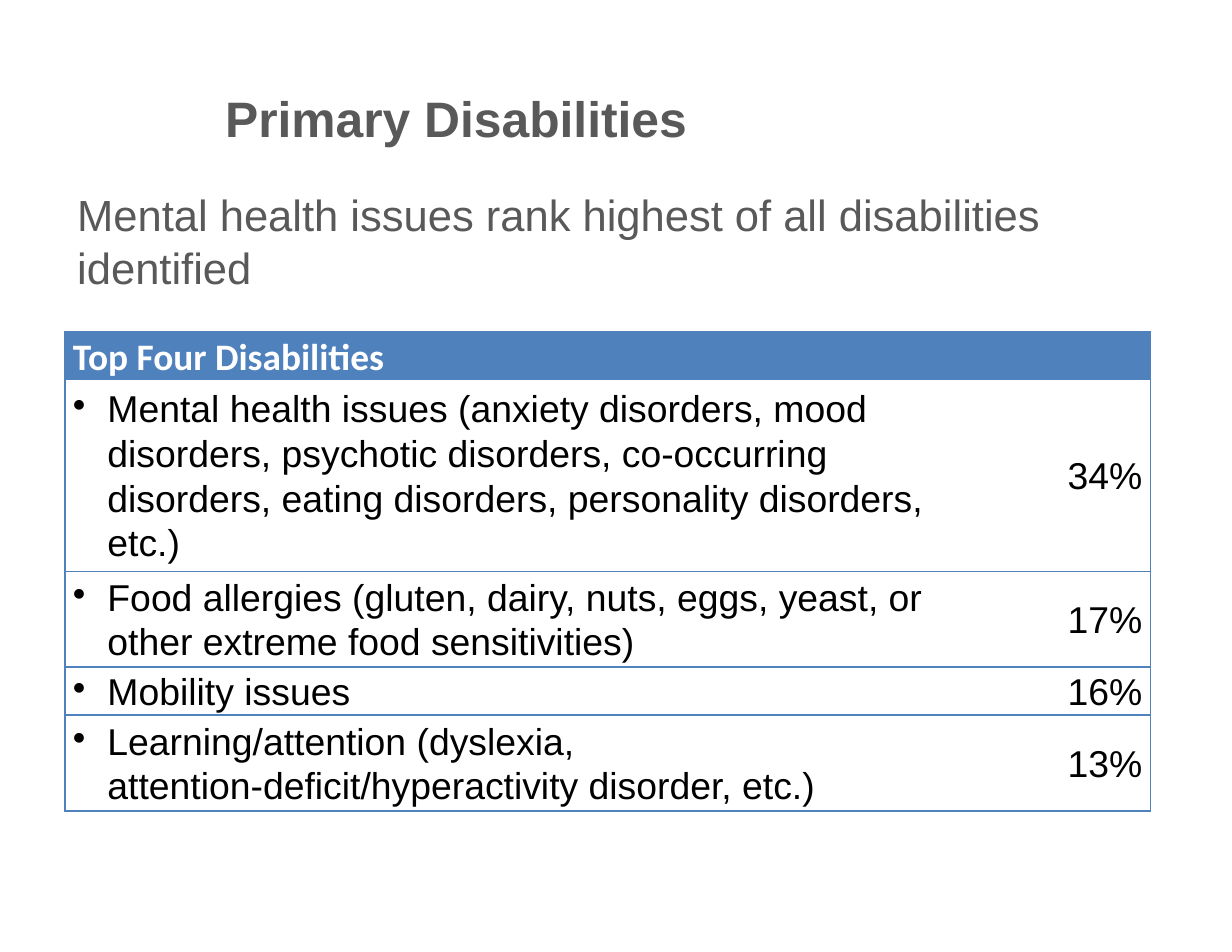
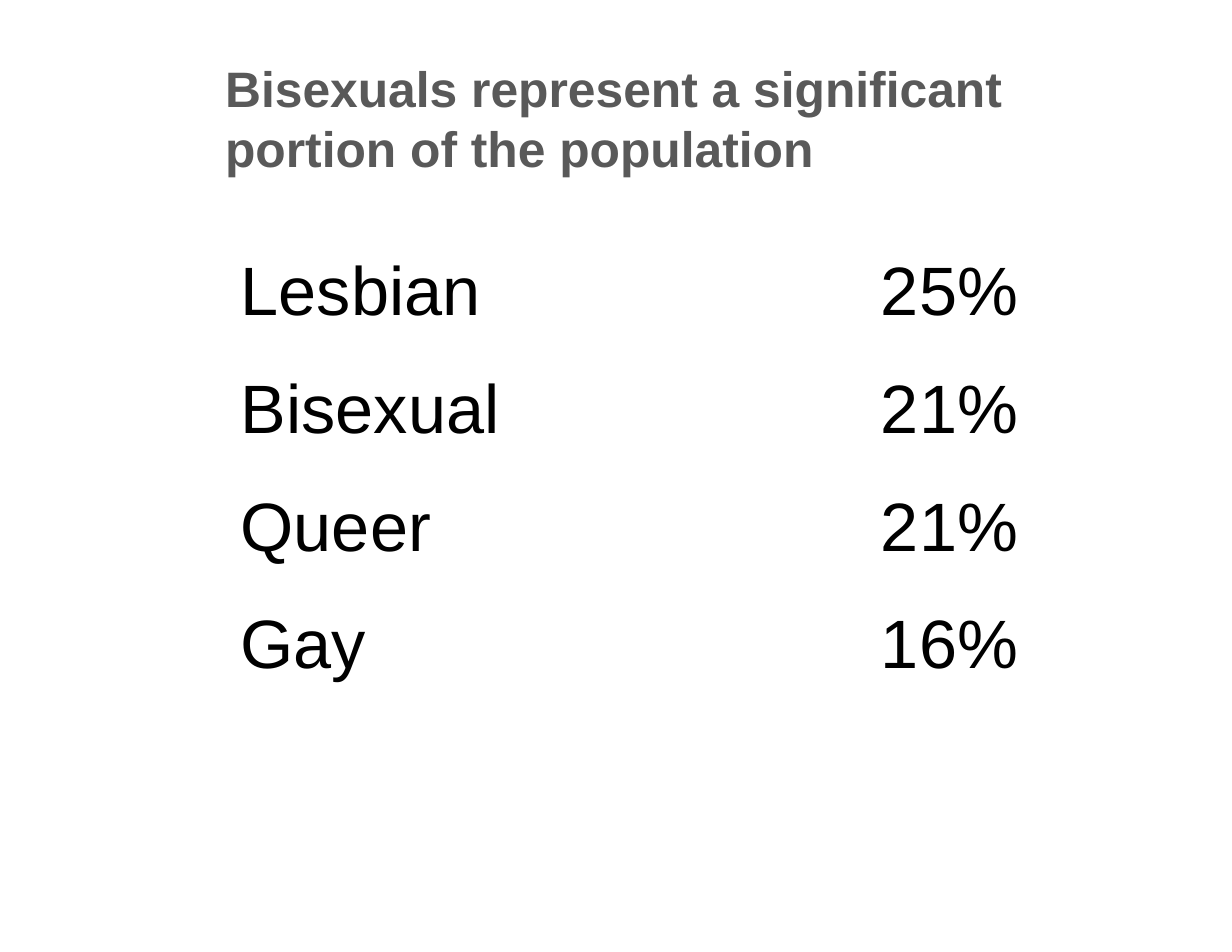
from lxml import etree
from pptx import Presentation
from pptx import util as u
from pptx.dml.color import RGBColor
from pptx.enum import text
from pptx.oxml import ns

COLORS = {"heading": "595959", "accent": "4F81BD", "body": "000000", "paper": "FFFFFF"}
LEFT, TITLE_LEFT, RIGHT = 0.58, 1.9, 10.45
LINE = 0.4
BULLET_INDENT = u.Inches(0.31)
PLAIN_STYLE = "{2D5ABB26-0587-4C30-8999-92F81FD0307C}"


def write(box, words, size, color, bold=False, face="Arial", align=text.PP_ALIGN.LEFT,
          margins=(0.11, 0.06), anchor=text.MSO_ANCHOR.MIDDLE, spacing=None, bullet=False):
    holder = box if hasattr(box, "vertical_anchor") else box.text_frame
    holder.margin_left = holder.margin_right = u.Inches(margins[0])
    holder.margin_top = holder.margin_bottom = u.Inches(margins[1])
    holder.vertical_anchor = anchor
    box.text_frame.word_wrap = True
    paragraph = box.text_frame.paragraphs[0]
    paragraph.text = words
    if bullet:
        properties = paragraph._p.get_or_add_pPr()
        properties.set("marL", str(BULLET_INDENT))
        properties.set("indent", str(-BULLET_INDENT))
        etree.SubElement(properties, ns.qn("a:buChar"), char="•")
    paragraph.alignment = align
    if spacing:
        paragraph.line_spacing = spacing
    paragraph.font.size = u.Pt(size)
    paragraph.font.name = face
    paragraph.font.bold = bold
    paragraph.font.color.rgb = RGBColor.from_string(COLORS[color])


def plain_table(slide, left, top, widths, heights):
    frame = slide.shapes.add_table(len(heights), len(widths), u.Inches(left), u.Inches(top),
                                   u.Inches(sum(widths)), u.Inches(sum(heights)))
    table = frame.table
    table.first_row = table.horz_banding = False
    table._tbl.tblPr.find(ns.qn("a:tableStyleId")).text = PLAIN_STYLE
    for column, width in zip(table.columns, widths):
        column.width = u.Inches(width)
    for row, height in zip(table.rows, heights):
        row.height = u.Inches(height)
    return table


prs = Presentation()
prs.slide_width, prs.slide_height = u.Inches(11), u.Inches(8.5)

slides = []
for heading in ("Primary Disabilities", "Bisexuals represent a significant portion of the population"):
    slide = prs.slides.add_slide(prs.slide_layouts[5])
    title = slide.shapes.title
    title.left, title.top = u.Inches(TITLE_LEFT), u.Inches(0.34)
    title.width, title.height = u.Inches(RIGHT - TITLE_LEFT), u.Inches(1.42)
    write(title, heading, 32, "heading", bold=True)
    title.text_frame.auto_size = text.MSO_AUTO_SIZE.NONE
    slides.append(slide)
disability_slide, orientation_slide = slides

finding = disability_slide.shapes.add_textbox(u.Inches(LEFT), u.Inches(1.62),
                                              u.Inches(RIGHT - LEFT), u.Inches(1.05))
write(finding, "Mental health issues rank highest of all disabilities identified", 28, "heading",
      anchor=text.MSO_ANCHOR.TOP)

cell_style = {"margins": (0.07, 0), "spacing": 1.07}
share_style = {**cell_style, "align": text.PP_ALIGN.RIGHT}

disabilities = [
    ("Mental health issues (anxiety disorders, mood disorders, psychotic disorders, "
     "co-occurring disorders, eating disorders, personality disorders, etc.)", "34%", 4),
    ("Food allergies (gluten, dairy, nuts, eggs, yeast, or other extreme food sensitivities)", "17%", 2),
    ("Mobility issues", "16%", 1),
    ("Learning/attention (dyslexia, attention-deficit/hyperactivity disorder, etc.)", "13%", 2),
]
ranking = plain_table(disability_slide, LEFT, 2.96, (8.15, 1.54),
                      [LINE] + [LINE * lines for _, _, lines in disabilities])
for row_number, row in enumerate(ranking.rows):
    for cell, outer_side in zip(row.cells, ("a:lnL", "a:lnR")):
        for side in (outer_side, "a:lnT", "a:lnB"):
            border = etree.SubElement(cell._tc.get_or_add_tcPr(), ns.qn(side), w=str(u.Pt(1)))
            ink = etree.SubElement(border, ns.qn("a:solidFill"))
            etree.SubElement(ink, ns.qn("a:srgbClr"), val=COLORS["accent"])
        cell.fill.solid()
        cell.fill.fore_color.rgb = RGBColor.from_string(COLORS["paper" if row_number else "accent"])
write(ranking.cell(0, 0), "Top Four Disabilities", 24, "paper", bold=True, face="Calibri", **cell_style)
for row_number, (disability, share, _) in enumerate(disabilities, 1):
    write(ranking.cell(row_number, 0), disability, 24, "body", bullet=True, **cell_style)
    write(ranking.cell(row_number, 1), share, 24, "body", **share_style)

orientations = [("Lesbian", "25%"), ("Bisexual", "21%"), ("Queer", "21%"), ("Gay", "16%")]
population = plain_table(orientation_slide, 2.08, 2.06, (5.16, 1.92), [1.05] * len(orientations))
for row_number, (orientation, share) in enumerate(orientations):
    write(population.cell(row_number, 0), orientation, 44, "body", **cell_style)
    write(population.cell(row_number, 1), share, 44, "body", **share_style)

prs.save("out.pptx")
